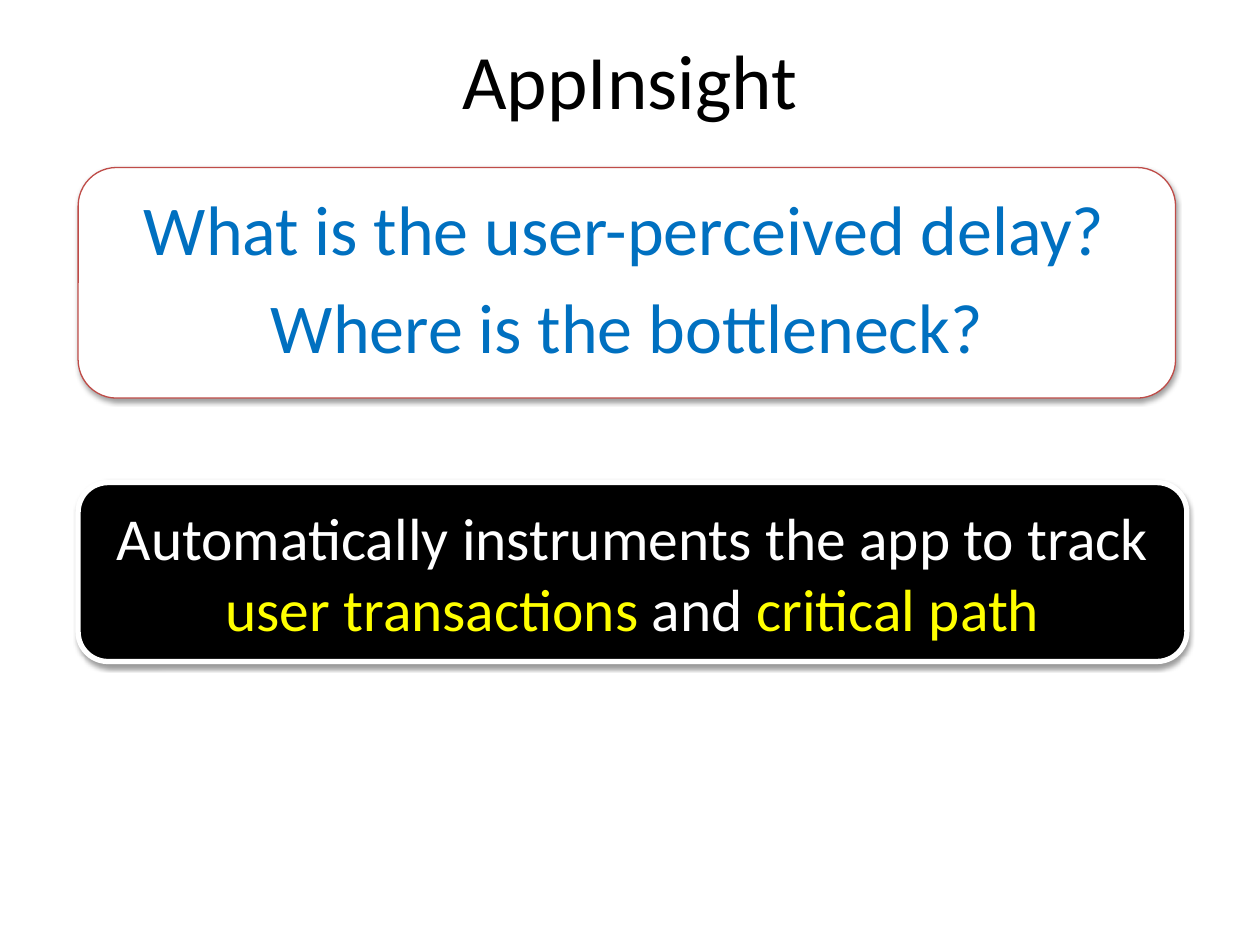
from dataclasses import dataclass

from lxml import etree
from pptx import Presentation
from pptx.dml.color import RGBColor
from pptx.enum.shapes import MSO_SHAPE as Shape
from pptx.enum.text import MSO_ANCHOR as Anchor, PP_ALIGN as Align
from pptx.oxml import parse_xml
from pptx.oxml.ns import nsdecls, qn
from pptx.util import Inches, Pt


@dataclass(frozen=True)
class Theme:
    font: str = "Calibri"
    black: str = "000000"
    white: str = "FFFFFF"
    red: str = "BF4C48"
    blue: str = "0070C0"
    yellow: str = "FFFF00"
    title_size: int = 44
    question_size: int = 40
    answer_size: int = 34


THEME = Theme()


def place(left, top, width, height):
    return [Inches(length) for length in (left, top, width, height)]


def write(shape, lines, size):
    """Fill a shape with centred lines, each a list of (text, colour) spans."""
    frame = shape.text_frame
    frame.word_wrap = True
    frame.vertical_anchor = Anchor.MIDDLE
    for index, line in enumerate(lines):
        para = frame.add_paragraph() if index else frame.paragraphs[0]
        para.alignment = Align.CENTER
        for text, colour in line:
            span = para.add_run()
            span.text = text
            span.font.name = THEME.font
            span.font.size = Pt(size)
            span.font.color.rgb = RGBColor.from_string(colour)


def add_soft_shadow(shape):
    shape.shadow.inherit = False
    effects = shape.element.spPr.find(qn("a:effectLst"))
    shadow = parse_xml(
        f'<a:outerShdw {nsdecls("a")} blurRad="{Pt(3.1)}" dist="{Pt(1.6)}" '
        'dir="5400000" rotWithShape="0"/>'
    )
    colour = etree.SubElement(shadow, qn("a:srgbClr"), val=THEME.black)
    etree.SubElement(colour, qn("a:alpha"), val="38000")
    effects.append(shadow)


def add_panel(page, area, fill, line, line_width):
    panel = page.shapes.add_shape(Shape.ROUNDED_RECTANGLE, *place(*area))
    panel.fill.solid()
    panel.fill.fore_color.rgb = RGBColor.from_string(fill)
    panel.line.color.rgb = RGBColor.from_string(line)
    panel.line.width = Pt(line_width)
    add_soft_shadow(panel)
    return panel


def add_title(page, text):
    title = page.shapes.title
    title.left, title.top, title.width, title.height = place(0.5, 0.25, 9, 0.75)
    write(title, [[(text, THEME.black)]], THEME.title_size)


def add_question(page, text, area):
    box = page.shapes.add_textbox(*place(*area))
    write(box, [[(text, THEME.blue)]], THEME.question_size)


def main():
    deck = Presentation()
    deck.slide_width, deck.slide_height = Inches(10), Inches(7.5)
    page = deck.slides.add_slide(deck.slide_layouts[5])

    add_panel(page, (0.62, 1.33, 8.71, 1.83), THEME.white, THEME.red, 0.75)
    add_title(page, "AppInsight")
    add_question(page, "What is the user-perceived delay?", (0.62, 1.39, 8.67, 0.83))
    add_question(page, "Where is the bottleneck?", (0.62, 2.17, 8.71, 0.83))

    answer = add_panel(page, (0.62, 3.83, 8.8, 1.42), THEME.black, THEME.white, 3)
    lines = [
        [("Automatically instruments the app to track", THEME.white)],
        [
            ("user transactions ", THEME.yellow),
            ("and ", THEME.white),
            ("critical path", THEME.yellow),
        ],
    ]
    write(answer, lines, THEME.answer_size)
    deck.save("out.pptx")


if __name__ == "__main__":
    main()
